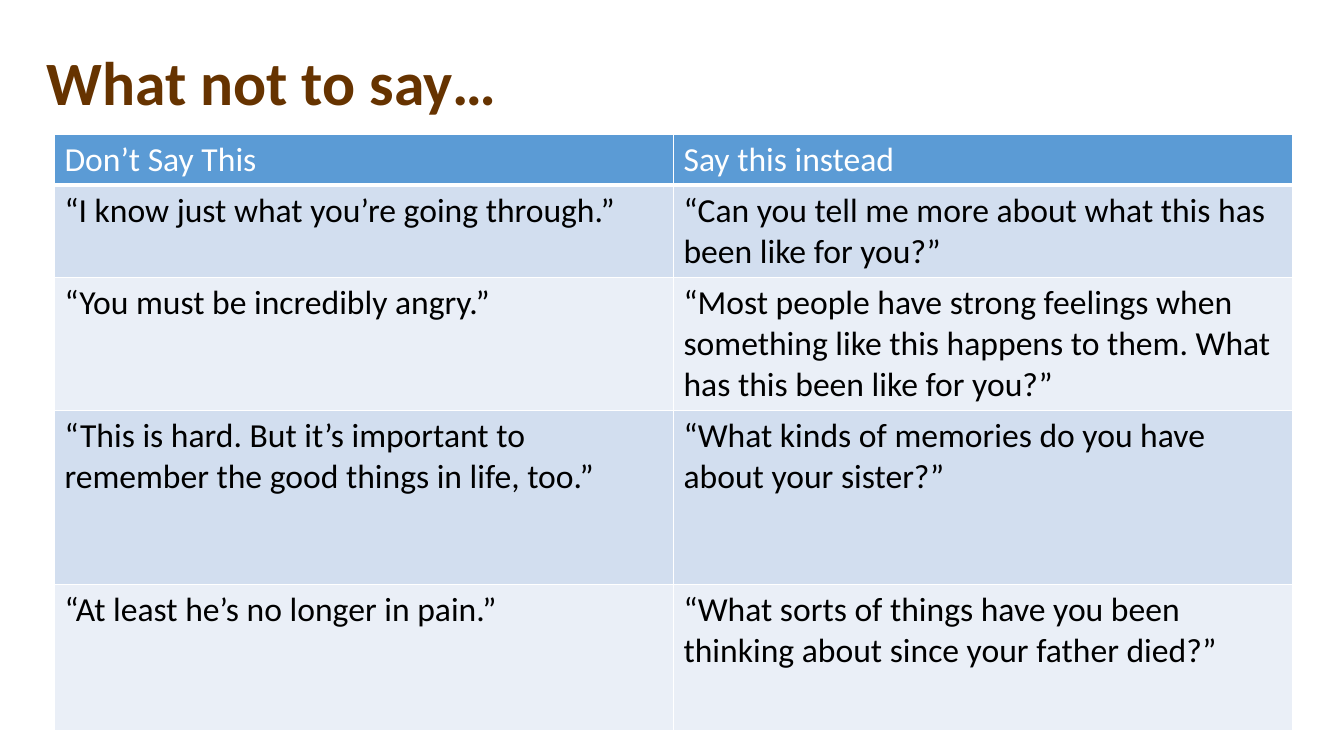
from lxml.etree import SubElement
from pptx import Presentation
from pptx.dml.color import RGBColor
from pptx.enum.text import MSO_ANCHOR, PP_ALIGN
from pptx.oxml.ns import qn
from pptx.util import Pt

EMU_PER_PX = 9144
TITLE_ONLY_LAYOUT = 5
COLORS = {
    "title": "663300",
    "header": "5B9BD5",
    "odd_row": "D2DEEF",
    "even_row": "EAEFF7",
    "white": "FFFFFF",
    "black": "000000",
}
PHRASES = [
    ("Don’t Say This", "Say this instead"),
    ("“I know just what you’re going through.”",
     "“Can you tell me more about what this has been like for you?”"),
    ("“You must be incredibly angry.”",
     "“Most people have strong feelings when something like this happens to them. "
     "What has this been like for you?”"),
    ("“This is hard. But it’s important to remember the good things in life, too.”",
     "“What kinds of memories do you have about your sister?”"),
    ("“At least he’s no longer in pain.”",
     "“What sorts of things have you been thinking about since your father died?”"),
]
ROW_HEIGHTS = [46, 83, 119, 173, 145]


def px(length):
    return length * EMU_PER_PX


class SlideBuilder:
    font_name = "Calibri"

    def __init__(self, presentation):
        layout = presentation.slide_layouts[TITLE_ONLY_LAYOUT]
        self.slide = presentation.slides.add_slide(layout)

    def format_text(self, paragraph, size, color, bold=False):
        for run in paragraph.runs:
            run.font.name = self.font_name
            run.font.size = Pt(size)
            run.font.bold = bold
            run.font.color.rgb = RGBColor.from_string(COLORS[color])

    def title(self, text, left, top, width, height):
        shape = self.slide.shapes.title
        shape.left, shape.top = px(left), px(top)
        shape.width, shape.height = px(width), px(height)
        shape.text_frame.text = text
        shape.text_frame.vertical_anchor = MSO_ANCHOR.MIDDLE
        paragraph = shape.text_frame.paragraphs[0]
        paragraph.alignment = PP_ALIGN.LEFT
        paragraph.line_spacing = 0.9
        self.format_text(paragraph, 44, "title", bold=True)

    def borders(self, cell, bottom_width):
        properties = cell._tc.get_or_add_tcPr()
        widths = {"a:lnL": 1, "a:lnR": 1, "a:lnT": 1, "a:lnB": bottom_width}
        for tag, width in widths.items():
            line = SubElement(properties, qn(tag), w=str(Pt(width)))
            fill = SubElement(line, qn("a:solidFill"))
            SubElement(fill, qn("a:srgbClr"), val=COLORS["white"])

    def cell(self, cell, text, fill, color, bottom_width):
        self.borders(cell, bottom_width)
        cell.fill.solid()
        cell.fill.fore_color.rgb = RGBColor.from_string(COLORS[fill])
        cell.text_frame.text = text
        self.format_text(cell.text_frame.paragraphs[0], 24, color)

    def table(self, rows, left, top, column_width, row_heights):
        column_count = len(rows[0])
        table = self.slide.shapes.add_table(
            len(rows), column_count, px(left), px(top),
            px(column_width * column_count), px(sum(row_heights))).table
        for column in table.columns:
            column.width = px(column_width)
        for row_index, (texts, height) in enumerate(zip(rows, row_heights)):
            table.rows[row_index].height = px(height)
            if row_index == 0:
                style = ("header", "white", 3)
            else:
                style = ("odd_row" if row_index % 2 else "even_row", "black", 1)
            for column_index, text in enumerate(texts):
                self.cell(table.cell(row_index, column_index), text, *style)


def main():
    presentation = Presentation()
    presentation.slide_width, presentation.slide_height = px(1333), px(750)
    builder = SlideBuilder(presentation)
    builder.title("What not to say…", 36, 12, 1150, 145)
    builder.table(PHRASES, 54, 133, 614, ROW_HEIGHTS)
    presentation.save("out.pptx")


if __name__ == "__main__":
    main()
